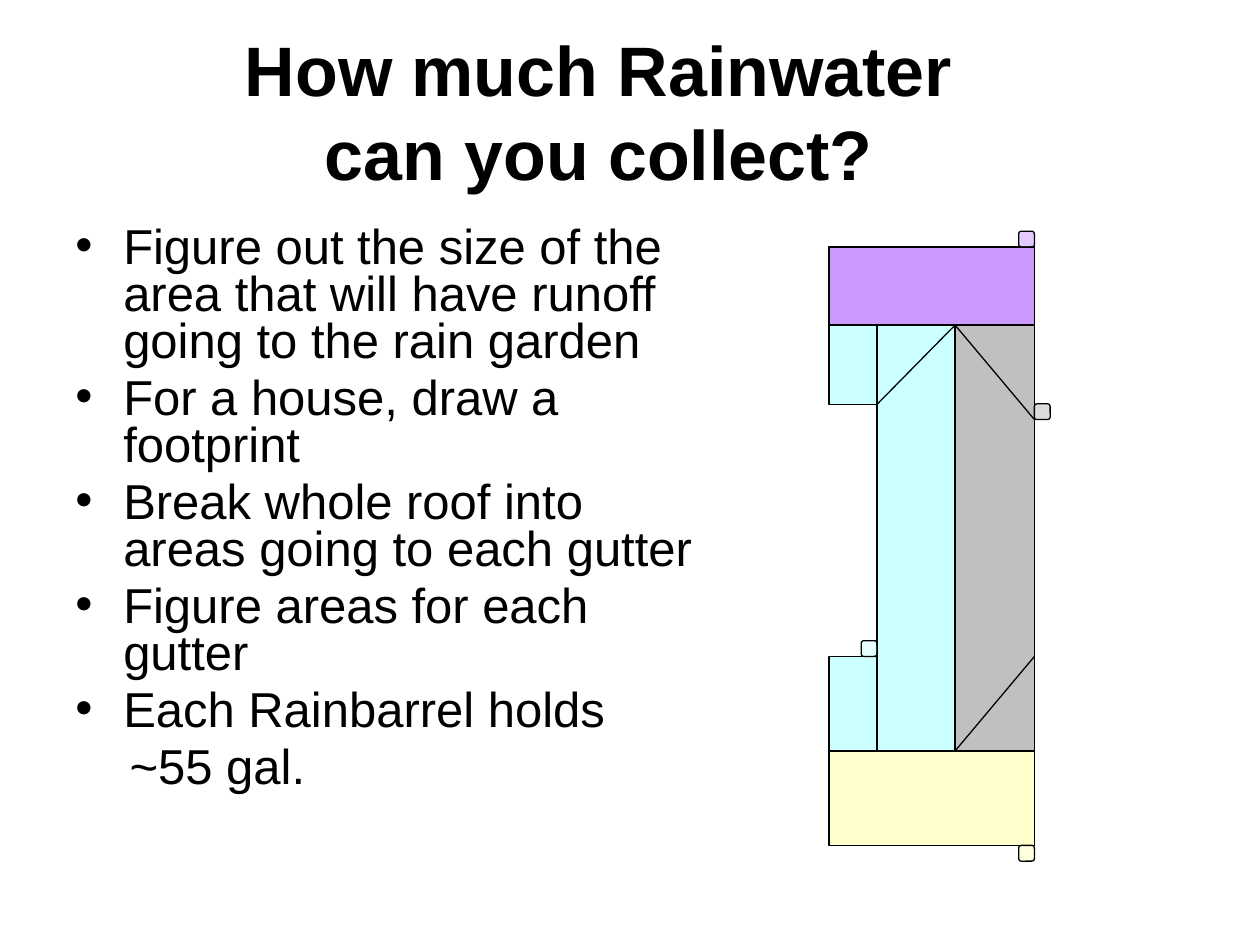
from lxml import etree
from pptx import Presentation
from pptx.dml.color import RGBColor
from pptx.enum.shapes import MSO_CONNECTOR, MSO_SHAPE
from pptx.enum.text import MSO_ANCHOR, PP_ALIGN
from pptx.oxml.ns import qn
from pptx.util import Inches, Pt

RECTANGLE, ROUNDED = MSO_SHAPE.RECTANGLE, MSO_SHAPE.ROUNDED_RECTANGLE
STRAIGHT = MSO_CONNECTOR.STRAIGHT
TOP, MIDDLE = MSO_ANCHOR.TOP, MSO_ANCHOR.MIDDLE
LEFT, CENTER = PP_ALIGN.LEFT, PP_ALIGN.CENTER

BLACK = RGBColor(0x00, 0x00, 0x00)
AQUA = RGBColor(0xCC, 0xFF, 0xFF)
PURPLE = RGBColor(0xCC, 0x99, 0xFF)
GRAY = RGBColor(0xC0, 0xC0, 0xC0)
YELLOW = RGBColor(0xFF, 0xFF, 0xCC)

TITLE = "How much Rainwater\vcan you collect?"
BULLETS = [
    "Figure out the size of the area that will have runoff going to the rain garden",
    "For a house, draw a footprint",
    "Break whole roof into areas going to each gutter",
    "Figure areas for each gutter",
    "Each Rainbarrel holds",
]
BARREL_VOLUME = "~55 gal."

# House footprint: grid lines of the roof, in inches
WEST, INNER, RIDGE, EAST = 6.58, 6.96, 7.58, 8.21
NORTH, EAVE, NOTCH, LOWER, SILL, SOUTH = 1.96, 2.58, 3.21, 5.21, 5.96, 6.71
HIP = 3.33
BARREL = 0.125

# left, top, right, bottom, colour
ROOF_AREAS = [
    (WEST, LOWER, EAST, SILL, AQUA),
    (WEST, NORTH, EAST, EAVE, PURPLE),
    (WEST, EAVE, EAST, NOTCH, AQUA),
    (RIDGE, EAVE, EAST, SILL, GRAY),
    (INNER, EAVE, RIDGE, SILL, AQUA),
    (WEST, SILL, EAST, SOUTH, YELLOW),
]
# left, top, colour, opacity in percent
RAIN_BARRELS = [
    (EAST - BARREL, NORTH - BARREL, PURPLE, 52),
    (EAST - BARREL, SOUTH, YELLOW, 60),
    (INNER - BARREL, LOWER - BARREL, AQUA, 50),
    (EAST, HIP - BARREL, GRAY, 54),
]
ROOF_LINES = [
    (RIDGE, EAVE, INNER, NOTCH),
    (RIDGE, EAVE, EAST, HIP),
    (EAST, LOWER, RIDGE, SILL),
]


def apply(target, values):
    for name, value in values.items():
        setattr(target, name, value)


def add_text_frame(slide, box, anchor):
    frame = slide.shapes.add_textbox(*map(Inches, box)).text_frame
    apply(frame, {"word_wrap": True, "vertical_anchor": anchor})
    return frame


def write(paragraph, text, size, bold, layout):
    paragraph.text = text
    apply(paragraph, layout)
    for run in paragraph.runs:
        apply(run.font, {"name": "Arial", "size": Pt(size), "bold": bold})
        run.font.color.rgb = BLACK


def indent(paragraph, margin, first_line, bullet=None):
    properties = paragraph._p.get_or_add_pPr()
    properties.set("marL", str(Inches(margin)))
    properties.set("indent", str(Inches(first_line)))
    if bullet:
        etree.SubElement(properties, qn("a:buFont")).set("typeface", "Arial")
        etree.SubElement(properties, qn("a:buChar")).set("char", bullet)


def outline(shape):
    shape.line.color.rgb = BLACK
    shape.line.width = Pt(0.75)


def add_area(slide, kind, box, color):
    shape = slide.shapes.add_shape(kind, *map(Inches, box))
    shape.shadow.inherit = False
    shape.fill.solid()
    shape.fill.fore_color.rgb = color
    outline(shape)
    return shape


def main():
    presentation = Presentation()
    apply(presentation, {"slide_width": Inches(10), "slide_height": Inches(7.5)})
    slide = presentation.slides.add_slide(presentation.slide_layouts[6])

    # Title
    title = add_text_frame(slide, (0.25, 0.25, 9, 1.25), MIDDLE)
    write(title.paragraphs[0], TITLE, 40, True, {"alignment": CENTER})

    # Bullet list, ending in an unbulleted line
    body = add_text_frame(slide, (0.5, 1.75, 5.25, 4.95), TOP)
    layout = {"alignment": LEFT, "line_spacing": 0.8, "space_before": Pt(5.6)}
    for number, text in enumerate(BULLETS + [BARREL_VOLUME]):
        paragraph = body.add_paragraph() if number else body.paragraphs[0]
        write(paragraph, text, 28, False, layout)
        if number < len(BULLETS):
            indent(paragraph, 0.38, -0.38, "•")
        else:
            indent(paragraph, 0.43, 0)

    # Roof areas
    for left, top, right, bottom, color in ROOF_AREAS:
        add_area(slide, RECTANGLE, (left, top, right - left, bottom - top), color)

    # Rain barrels at the gutters
    for left, top, color, opacity in RAIN_BARRELS:
        barrel = add_area(slide, ROUNDED, (left, top, BARREL, BARREL), color)
        fill_color = barrel._element.spPr.find(qn("a:solidFill"))[0]
        etree.SubElement(fill_color, qn("a:alpha")).set("val", str(opacity * 1000))

    # Hips and valleys of the roof
    for ends in ROOF_LINES:
        line = slide.shapes.add_connector(STRAIGHT, *map(Inches, ends))
        outline(line)
        etree.SubElement(line._element.spPr, qn("a:effectLst"))

    presentation.save("out.pptx")


if __name__ == "__main__":
    main()
